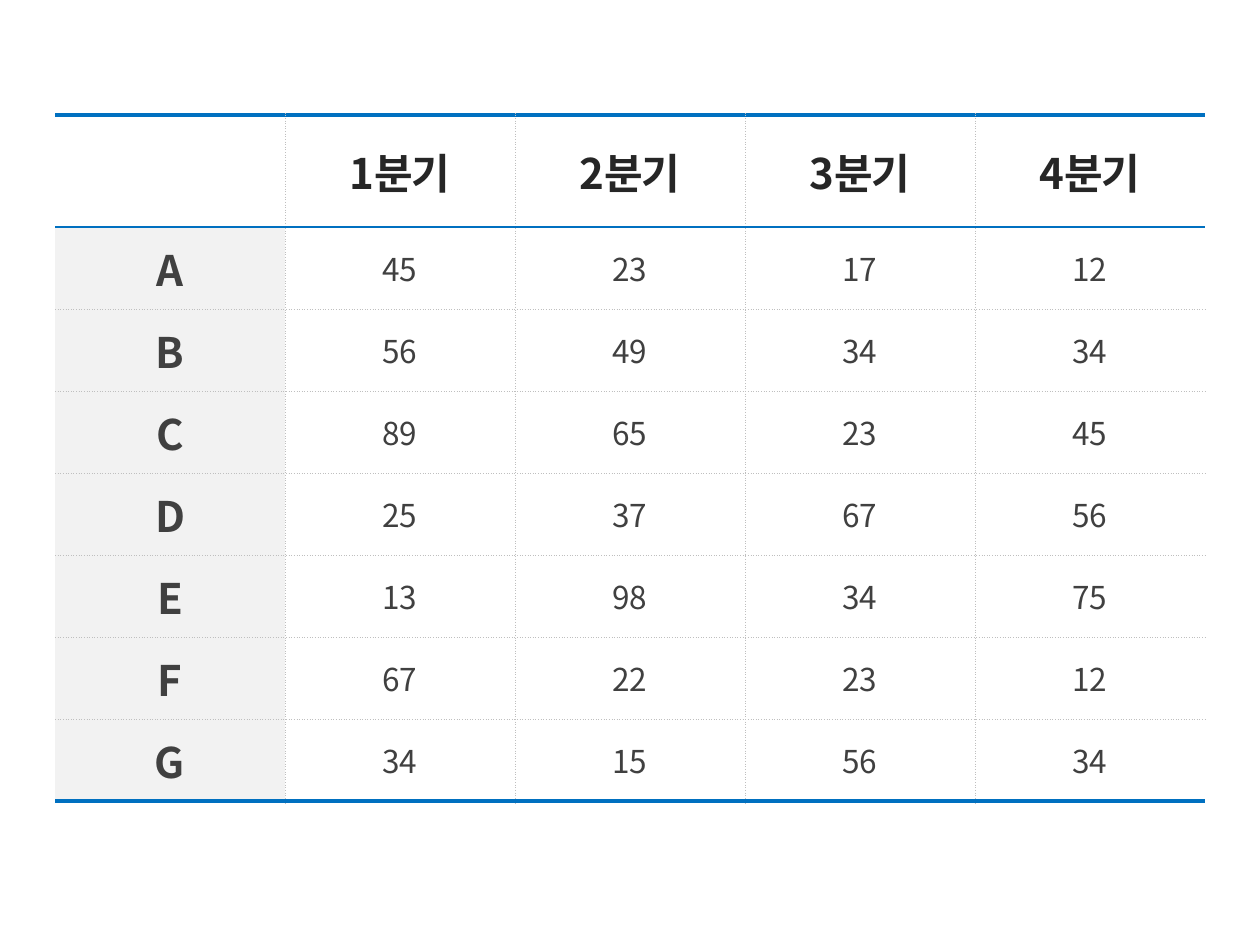
from lxml.etree import SubElement
from pptx import Presentation
from pptx.dml.color import RGBColor
from pptx.enum.text import MSO_ANCHOR, PP_ALIGN
from pptx.oxml import parse_xml
from pptx.oxml.ns import nsdecls, qn
from pptx.util import Inches, Pt

# Content
QUARTERS = ["", "1분기", "2분기", "3분기", "4분기"]
RESULTS = [
    ("A", 45, 23, 17, 12),
    ("B", 56, 49, 34, 34),
    ("C", 89, 65, 23, 45),
    ("D", 25, 37, 67, 56),
    ("E", 13, 98, 34, 75),
    ("F", 67, 22, 23, 12),
    ("G", 34, 15, 56, 34),
]

# Layout in px
PX = Inches(1) / 126
SLIDE_W, SLIDE_H = 1260, 945
LEFT, TOP = 55, 115
COL_W, HEADER_H, ROW_H = 230, 112, 82

# Style
FONT = "Noto Sans CJK KR"
WHITE = RGBColor(0xFF, 0xFF, 0xFF)
LABEL_FILL = RGBColor(0xF2, 0xF2, 0xF2)
HEADER_TEXT = RGBColor(0x26, 0x26, 0x26)
BODY_TEXT = RGBColor(0x40, 0x40, 0x40)
BLUE = RGBColor(0x00, 0x70, 0xC0)
GRID_GRAY = RGBColor(0xBF, 0xBF, 0xBF)
# Borders: colour, width in points, dash
EDGE = (BLUE, 3, "solid")
HEADER_RULE = (BLUE, 0.75, "solid")
GRID = (GRID_GRAY, 0.5, "sysDot")


def px(length):
    return round(length * PX)


def set_borders(cell, left, right, top, bottom):
    sides = {"lnL": left, "lnR": right, "lnT": top, "lnB": bottom}
    for index, (tag, border) in enumerate(sides.items()):
        if border:
            color, width, dash = border
            line = (f'<a:{tag} {nsdecls("a")} w="{Pt(width)}"><a:solidFill>'
                    f'<a:srgbClr val="{color}"/></a:solidFill>'
                    f'<a:prstDash val="{dash}"/></a:{tag}>')
        else:
            line = f'<a:{tag} {nsdecls("a")}><a:noFill/></a:{tag}>'
        cell._tc.get_or_add_tcPr().insert(index, parse_xml(line))


def set_text(cell, text, size, bold, color, spacing):
    cell.vertical_anchor = MSO_ANCHOR.MIDDLE
    cell.text_frame.text = text
    paragraph = cell.text_frame.paragraphs[0]
    paragraph.alignment = PP_ALIGN.CENTER
    for run in paragraph.runs:
        run.font.size, run.font.bold = Pt(size), bold
        run.font.color.rgb = color
        run.font.name = FONT
        properties = run._r.get_or_add_rPr()
        properties.set("spc", str(spacing))
        SubElement(properties, qn("a:ea")).set("typeface", FONT)


def set_fill(cell, color):
    if color is None:
        cell.fill.background()
    else:
        cell.fill.solid()
        cell.fill.fore_color.rgb = color


presentation = Presentation()
presentation.slide_width, presentation.slide_height = px(SLIDE_W), px(SLIDE_H)
slide = presentation.slides.add_slide(presentation.slide_layouts[6])

# Quarterly table
rows = [QUARTERS, *RESULTS]
last_row, last_col = len(rows) - 1, len(QUARTERS) - 1
table = slide.shapes.add_table(
    len(rows), len(QUARTERS), px(LEFT), px(TOP), px(COL_W * len(QUARTERS)),
    px(HEADER_H + ROW_H * len(RESULTS))).table
table.first_row = table.horz_banding = False
for column in table.columns:
    column.width = px(COL_W)
for r, row in enumerate(table.rows):
    row.height = px(ROW_H if r else HEADER_H)

# Horizontal rules from top to bottom
rules = [EDGE, HEADER_RULE] + [GRID] * (len(RESULTS) - 1) + [EDGE]

for r, values in enumerate(rows):
    for c, value in enumerate(values):
        cell = table.cell(r, c)
        if r == 0:
            set_text(cell, value, 24, True, HEADER_TEXT, -100)
            set_fill(cell, WHITE)
        elif c == 0:
            set_text(cell, value, 24, True, BODY_TEXT, 0)
            set_fill(cell, LABEL_FILL)
        else:
            set_text(cell, str(value), 18, False, BODY_TEXT, 0)
            set_fill(cell, None)
        set_borders(cell, GRID if c > 0 else None,
                    GRID if c < last_col else None, rules[r], rules[r + 1])

presentation.save("out.pptx")
